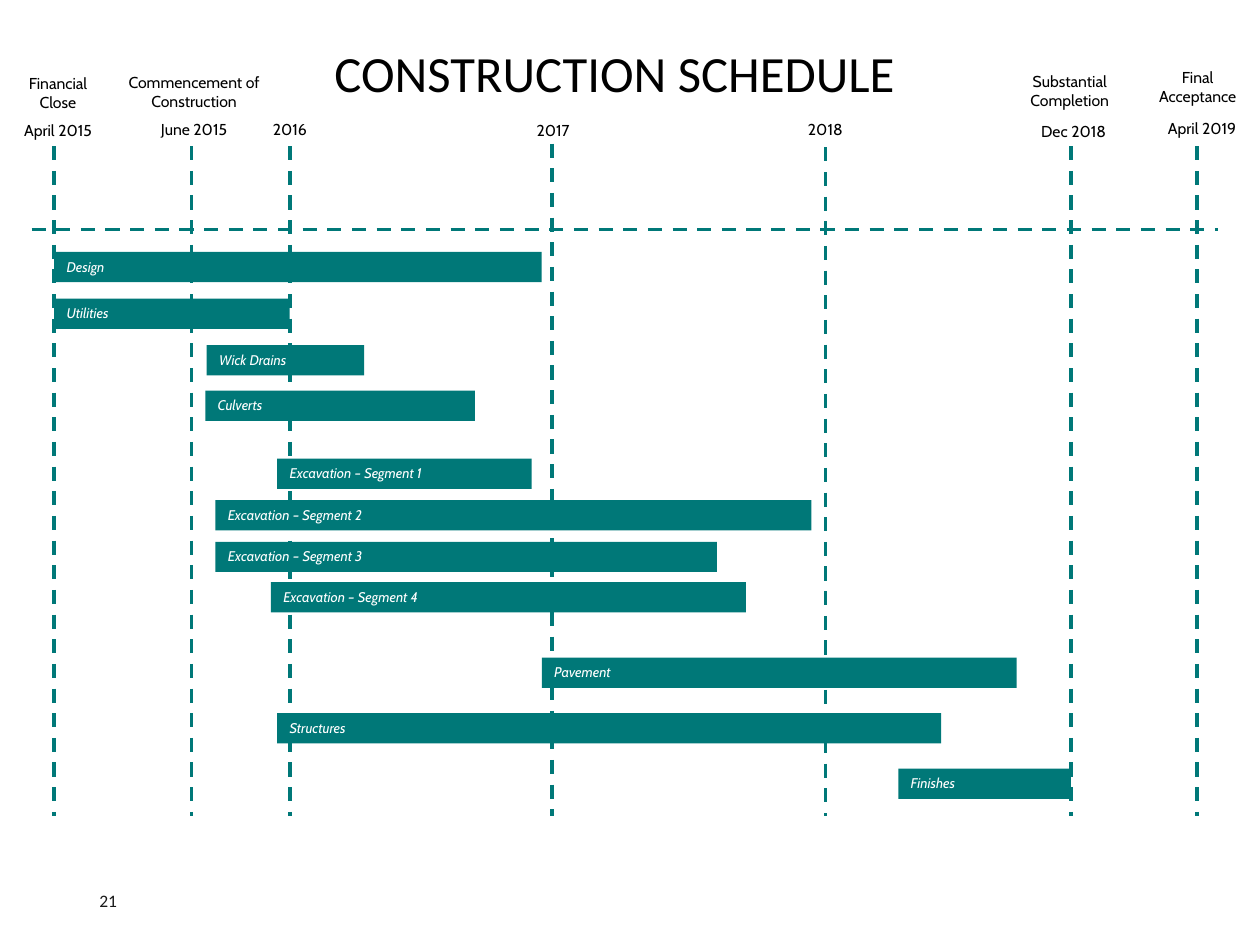
from typing import NamedTuple

from lxml import etree
from pptx import Presentation
from pptx.dml.color import RGBColor
from pptx.enum import dml, shapes, text
from pptx.oxml import ns
from pptx.util import Inches, Pt

TEAL = RGBColor(0x00, 0x78, 0x78)
BLACK = RGBColor(0x00, 0x00, 0x00)
WHITE = RGBColor(0xFF, 0xFF, 0xFF)
CHARCOAL = RGBColor(0x19, 0x19, 0x19)
BODY_FONT = "Cabin"
TITLE_FONT = "Calibri"
LINE_TOP, LINE_BOTTOM = 1.16, 6.48
BAR_HEIGHT = 0.24


class Label(NamedTuple):
    wording: str
    left: float
    top: float
    width: float = 0.92
    height: float = 0.25


class Activity(NamedTuple):
    name: str
    left: float
    top: float
    width: float


class Guide(NamedTuple):
    x: float
    top: float = LINE_TOP


GUIDES = [
    Guide(0.43), Guide(1.52), Guide(2.3), Guide(4.38, 1.14),
    Guide(6.55, 1.17), Guide(8.5), Guide(9.5),
]

LABELS = [
    Label("Financial Close", 0, 0.54, 0.92, 0.4),
    Label("Commencement of Construction", 0.78, 0.53, 1.52, 0.4),
    Label("Substantial Completion", 7.95, 0.52, 1.08, 0.4),
    Label("Final Acceptance", 9.01, 0.49, 0.99, 0.4),
    Label("April 2015", 0, 0.91),
    Label("June 2015", 1.08, 0.9),
    Label("2016", 1.84, 0.9),
    Label("2017", 3.93, 0.91),
    Label("2018", 6.09, 0.9),
    Label("Dec 2018", 8.06, 0.92),
    Label("April 2019", 9.08, 0.89),
]

ACTIVITIES = [
    Activity("Design", 0.43, 2, 3.87),
    Activity("Utilities", 0.43, 2.37, 1.87),
    Activity("Wick Drains", 1.64, 2.74, 1.25),
    Activity("Culverts", 1.63, 3.1, 2.14),
    Activity("Excavation – Segment 1", 2.2, 3.64, 2.02),
    Activity("Excavation – Segment 2", 1.71, 3.97, 4.73),
    Activity("Excavation – Segment 3", 1.71, 4.3, 3.98),
    Activity("Excavation – Segment 4", 2.15, 4.62, 3.77),
    Activity("Pavement", 4.3, 5.22, 3.77),
    Activity("Structures", 2.2, 5.66, 5.27),
    Activity("Finishes", 7.13, 6.1, 1.37),
]


def write(owner, wording: str, size: float, color: RGBColor, font: str = BODY_FONT,
          align=text.PP_ALIGN.CENTER, anchor=text.MSO_ANCHOR.TOP, italic: bool = False):
    frame = owner.text_frame
    frame.text = wording
    frame.word_wrap = True
    frame.vertical_anchor = anchor
    paragraph = frame.paragraphs[0]
    paragraph.alignment = align
    run_font = paragraph.runs[0].font
    run_font.name = font
    run_font.size = Pt(size)
    run_font.italic = italic
    run_font.color.rgb = color
    return paragraph


def add_label(slide, label: Label, size: float = 9, color: RGBColor = BLACK, **style):
    box = slide.shapes.add_textbox(*map(Inches, label[1:]))
    return write(box, label.wording, size, color, **style)


def add_dashed_line(slide, x1: float, y1: float, x2: float, y2: float) -> None:
    dashes = slide.shapes.add_connector(
        shapes.MSO_CONNECTOR.STRAIGHT, *map(Inches, (x1, y1, x2, y2)))
    dashes.line.color.rgb = TEAL
    dashes.line.width = Pt(2)
    dashes.line.dash_style = dml.MSO_LINE.DASH
    etree.SubElement(dashes._element.spPr, ns.qn("a:effectLst"))


def add_bar(slide, activity: Activity) -> None:
    bar = slide.shapes.add_shape(
        shapes.MSO_SHAPE.RECTANGLE, Inches(activity.left), Inches(activity.top),
        Inches(activity.width), Inches(BAR_HEIGHT))
    bar.shadow.inherit = False
    bar.fill.solid()
    bar.fill.fore_color.rgb = TEAL
    bar.line.fill.background()
    write(bar, activity.name, 8, WHITE, align=text.PP_ALIGN.LEFT, italic=True)


def main() -> None:
    deck = Presentation()
    deck.slide_width, deck.slide_height = Inches(10), Inches(7.5)
    slide = deck.slides.add_slide(deck.slide_layouts[6])

    title = add_label(slide, Label("CONSTRUCTION SCHEDULE", 2.22, 0.31, 5.32, 0.59),
                      size=29, font=TITLE_FONT, anchor=text.MSO_ANCHOR.MIDDLE)
    title.line_spacing = 0.9
    add_label(slide, Label("21", 0.69, 6.95, 2.25, 0.4), size=10, color=CHARCOAL,
              font=TITLE_FONT, align=text.PP_ALIGN.LEFT, anchor=text.MSO_ANCHOR.MIDDLE)

    for guide in GUIDES:
        add_dashed_line(slide, guide.x, guide.top, guide.x, LINE_BOTTOM)
    add_dashed_line(slide, 0.25, 1.82, 9.67, 1.82)
    for activity in ACTIVITIES:
        add_bar(slide, activity)
    for label in LABELS:
        add_label(slide, label)

    deck.save("out.pptx")


if __name__ == "__main__":
    main()
